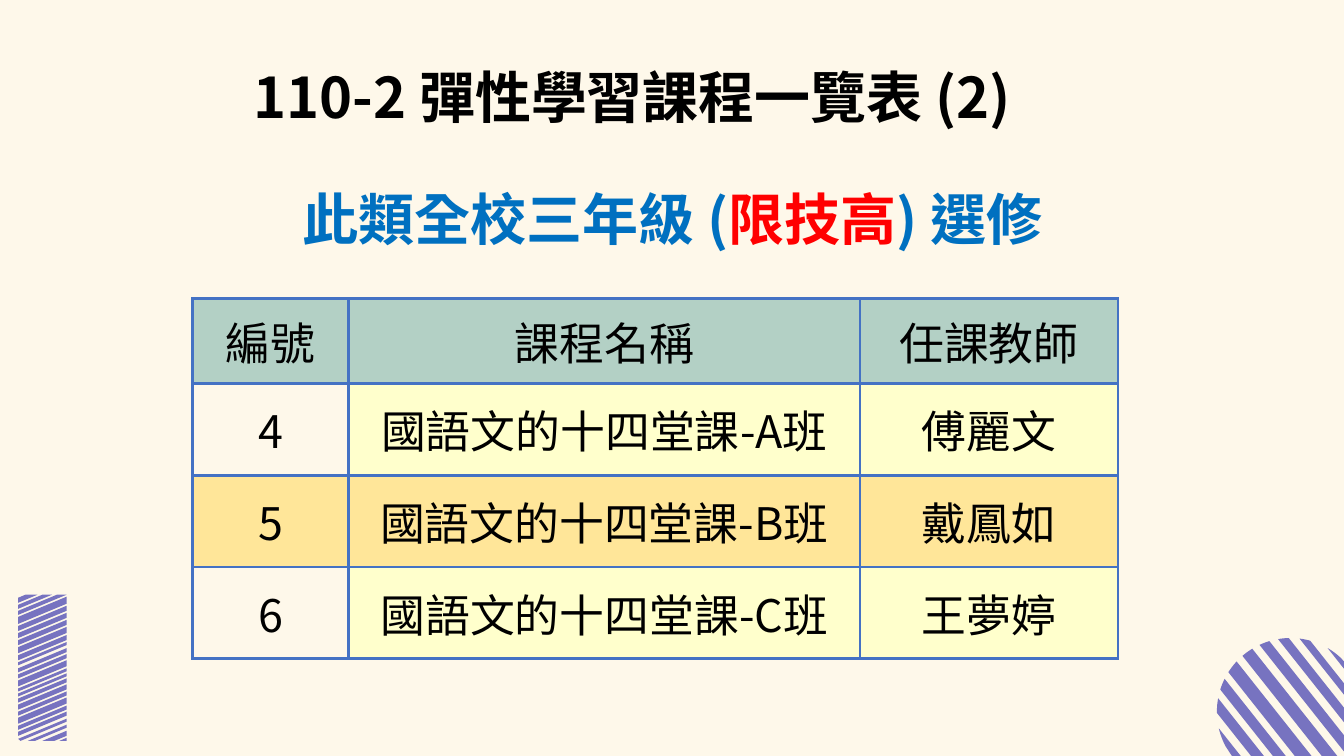
import math

import pptx
import pptx.dml.color
import pptx.enum.text
import pptx.oxml
import pptx.oxml.ns
import pptx.util

Inches = pptx.util.Inches
FONT = "Noto Sans CJK SC"
BLACK, BLUE, RED = "000000", "0070C0", "FF0000"
CREAM, GREEN, YELLOW, GOLD = "FEF8EA", "B3D0C5", "FFFFCC", "FFE699"
PURPLE, BORDER = "7773C0", "4472C4"

# left, top, width, height, line spacing, runs
HEADINGS = [
    (0.86, 1.63, 11.62, 1.06, 1.15,
     [("此類全校三年級 (", BLUE), ("限技高", RED), (") 選修", BLUE)]),
    (1.61, 0.6, 9.32, 0.91, 0.9, [("110-2 彈性學習課程一覽表 (2)", BLACK)]),
]
COURSES = [
    ("編號", "課程名稱", "任課教師"),
    ("4", "國語文的十四堂課-A班", "傅麗文"),
    ("5", "國語文的十四堂課-B班", "戴鳳如"),
    ("6", "國語文的十四堂課-C班", "王夢婷"),
]
ROW_FILLS = [
    (GREEN, GREEN, GREEN),
    (CREAM, YELLOW, YELLOW),
    (GOLD, GOLD, GOLD),
    (CREAM, YELLOW, YELLOW),
]
COLUMN_WIDTHS = [1.55, 5.07, 2.56]
ROW_HEIGHTS = [0.84, 0.91, 0.91, 0.91]

# Circle stripes: distances of both edges from the centre line
CIRCLE_X, CIRCLE_Y, RADIUS, ANGLE = 12.8, 7.06, 0.73, math.radians(51.6)
CIRCLE_STRIPES = [
    (-0.73, -0.66), (-0.58, -0.48), (-0.41, -0.31), (-0.24, -0.11), (-0.03, 0.09),
    (0.17, 0.27), (0.35, 0.44), (0.52, 0.59), (0.68, 0.73),
]
# Bar stripes: heights of both edges at the right side; each drops to the left
BAR_LEFT, BAR_RIGHT, BAR_TOP, BAR_BOTTOM, DROP = 0.18, 0.66, 5.9, 7.35, 0.2
BAR_STRIPES = [
    (5.73, 5.78), (5.8, 5.84), (5.86, 5.9), (5.92, 5.99), (6.01, 6.06),
    (6.08, 6.13), (6.15, 6.2), (6.22, 6.28), (6.3, 6.35), (6.37, 6.4),
    (6.43, 6.47), (6.49, 6.53), (6.55, 6.61), (6.63, 6.66), (6.68, 6.71),
    (6.73, 6.77), (6.79, 6.84), (6.86, 6.9), (6.92, 6.98), (7, 7.04),
    (7.06, 7.1), (7.13, 7.16), (7.19, 7.22), (7.25, 7.3), (7.32, 7.36),
]


def color(hex_text):
    return pptx.dml.color.RGBColor.from_string(hex_text)


def paint(fill, hex_text):
    fill.solid()
    fill.fore_color.rgb = color(hex_text)


def add_span(para, text, size, hex_text, bold=False):
    span = para.add_run()
    span.text = text
    span.font.size = pptx.util.Pt(size)
    span.font.bold = bold
    span.font.name = FONT
    span.font.color.rgb = color(hex_text)
    properties = span.font._element
    properties.set("lang", "zh-TW")
    east_asian = pptx.oxml.parse_xml(
        f'<a:ea {pptx.oxml.ns.nsdecls("a")} typeface="{FONT}"/>')
    properties.find(pptx.oxml.ns.qn("a:latin")).addnext(east_asian)


def circle_stripe(start, end):
    """Outline of one stripe, following the circle at both ends."""
    steps = 6
    sides = ([], [])
    for step in range(steps + 1):
        offset = start + (end - start) * step / steps
        half = math.sqrt(RADIUS ** 2 - offset ** 2)
        for side, along in zip(sides, (-half, half)):
            side.append((
                CIRCLE_X + along * math.cos(ANGLE) + offset * math.sin(ANGLE),
                CIRCLE_Y + along * math.sin(ANGLE) - offset * math.cos(ANGLE)))
    return sides[0] + sides[1][::-1]


def bar_stripe(upper, lower):
    """Outline of one slanted stripe, cut off at the ends of the bar."""
    slope = DROP / (BAR_RIGHT - BAR_LEFT)

    def edge_point(edge, y):
        y = min(max(y, BAR_TOP), BAR_BOTTOM)
        x = BAR_RIGHT - (y - edge) / slope
        return min(max(x, BAR_LEFT), BAR_RIGHT), y

    return [edge_point(upper, upper), edge_point(lower, lower),
            edge_point(lower, lower + DROP), edge_point(upper, upper + DROP)]


def add_stripes(page, outlines):
    contours = [[(Inches(x), Inches(y)) for x, y in outline] for outline in outlines]
    builder = page.shapes.build_freeform(*contours[0][0])
    for contour in contours:
        builder.move_to(*contour[0])
        builder.add_line_segments(contour[1:], close=True)
    shape = builder.convert_to_shape()
    shape.shadow.inherit = False
    paint(shape.fill, PURPLE)
    shape.line.fill.background()


def add_borders(cell):
    properties = cell._tc.get_or_add_tcPr()
    for position, side in enumerate(("lnL", "lnR", "lnT", "lnB")):
        properties.insert(position, pptx.oxml.parse_xml(
            f'<a:{side} {pptx.oxml.ns.nsdecls("a")} w="{pptx.util.Pt(2.25)}">'
            f'<a:solidFill><a:srgbClr val="{BORDER}"/></a:solidFill></a:{side}>'))


def add_courses(page):
    frame = page.shapes.add_table(
        len(COURSES), len(COLUMN_WIDTHS), Inches(1.91), Inches(2.96),
        Inches(sum(COLUMN_WIDTHS)), Inches(sum(ROW_HEIGHTS)))
    table = frame.table
    table.first_row = table.horz_banding = False
    for column, width in zip(table.columns, COLUMN_WIDTHS):
        column.width = Inches(width)
    for row, height, texts, fills in zip(table.rows, ROW_HEIGHTS, COURSES, ROW_FILLS):
        row.height = Inches(height)
        margin = Inches(0.1 if texts is COURSES[0] else 0.01)
        for cell, text, fill in zip(row.cells, texts, fills):
            cell.margin_left = cell.margin_right = margin
            cell.margin_top = cell.margin_bottom = margin
            cell.vertical_anchor = pptx.enum.text.MSO_ANCHOR.MIDDLE
            paint(cell.fill, fill)
            add_borders(cell)
            para = cell.text_frame.paragraphs[0]
            para.alignment = pptx.enum.text.PP_ALIGN.CENTER
            add_span(para, text, 32, BLACK)


def add_heading(page, left, top, width, height, spacing, runs):
    box = page.shapes.add_textbox(*map(Inches, (left, top, width, height)))
    frame = box.text_frame
    frame.word_wrap = True
    frame.margin_left = frame.margin_right = Inches(0.1)
    frame.margin_top = frame.margin_bottom = Inches(0.1)
    para = frame.paragraphs[0]
    para.alignment = pptx.enum.text.PP_ALIGN.CENTER
    para.line_spacing = spacing
    for text, hex_text in runs:
        add_span(para, text, 40, hex_text, bold=True)


def main():
    deck = pptx.Presentation()
    deck.slide_width, deck.slide_height = Inches(13.33), Inches(7.5)
    page = deck.slides.add_slide(deck.slide_layouts[6])
    paint(page.background.fill, CREAM)
    add_stripes(page, [circle_stripe(*edges) for edges in CIRCLE_STRIPES])
    add_stripes(page, [bar_stripe(*edges) for edges in BAR_STRIPES])
    add_courses(page)
    for heading in HEADINGS:
        add_heading(page, *heading)
    deck.save("out.pptx")


if __name__ == "__main__":
    main()
